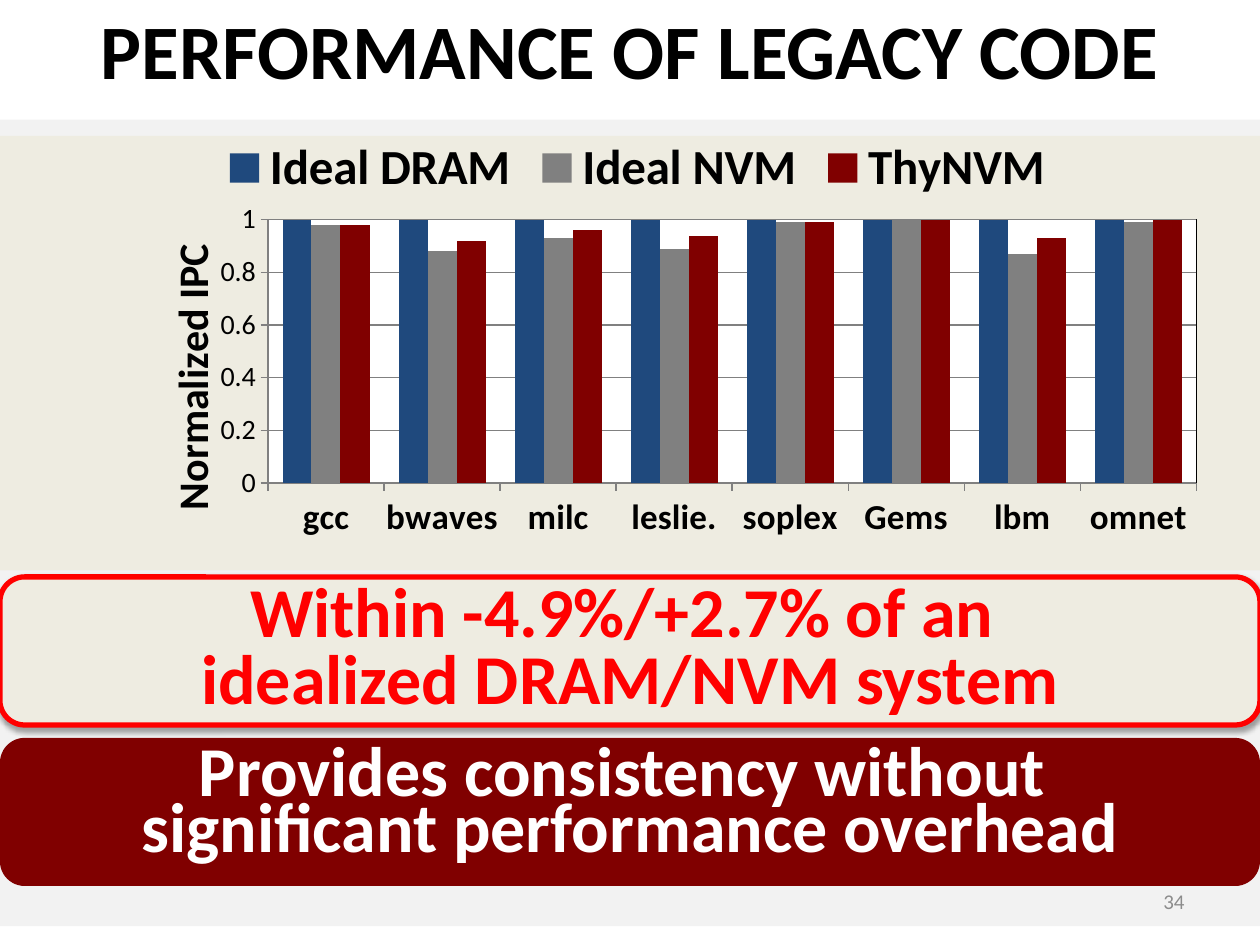
from collections import namedtuple
from dataclasses import dataclass

from lxml import etree
from pptx import Presentation
from pptx.chart.data import CategoryChartData
from pptx.dml.color import RGBColor
from pptx.enum.chart import XL_CHART_TYPE, XL_LEGEND_POSITION, XL_TICK_MARK
from pptx.enum.shapes import MSO_SHAPE
from pptx.enum.text import MSO_ANCHOR, PP_ALIGN
from pptx.oxml import parse_xml
from pptx.oxml.ns import nsdecls, qn
from pptx.util import Cm, Pt

COLUMNS = XL_CHART_TYPE.COLUMN_CLUSTERED
LEGEND_TOP = XL_LEGEND_POSITION.TOP
TICK_OUT, TICK_NONE = XL_TICK_MARK.OUTSIDE, XL_TICK_MARK.NONE
RECT, ROUNDED = MSO_SHAPE.RECTANGLE, MSO_SHAPE.ROUNDED_RECTANGLE
MIDDLE = MSO_ANCHOR.MIDDLE
CENTER, RIGHT = PP_ALIGN.CENTER, PP_ALIGN.RIGHT

Box = namedtuple("Box", "left top width height")  # centimetres


@dataclass(frozen=True)
class Theme:
    font: str = "Calibri"
    black: str = "000000"
    white: str = "FFFFFF"
    backdrop: str = "F2F2F2"
    cream: str = "EEECE1"
    blue: str = "1F497D"
    gray: str = "808080"
    maroon: str = "800000"
    red: str = "FF0000"
    number_gray: str = "8C8C8C"
    title: int = 44
    message: int = 40
    legend: int = 28
    axis_title: int = 24
    categories: int = 20
    values: int = 16
    number: int = 12


THEME = Theme()
SLIDE = Box(0, 0, 25.4, 19.05)
BENCHMARKS = ["gcc", "bwaves", "milc", "leslie.", "soplex", "Gems", "lbm", "omnet"]
SYSTEMS = [
    ("Ideal DRAM", THEME.blue, [1] * len(BENCHMARKS)),
    ("Ideal NVM", THEME.gray, [0.98, 0.88, 0.93, 0.89, 0.99, 1, 0.87, 0.99]),
    ("ThyNVM", THEME.maroon, [0.98, 0.92, 0.96, 0.94, 0.99, 1, 0.93, 1]),
]


def rgb(color):
    return RGBColor.from_string(color)


def lengths(box):
    return [Cm(value) for value in box]


def set_font(font, size, color=THEME.black, bold=False):
    font.name, font.size, font.bold = THEME.font, Pt(size), bold
    font.color.rgb = rgb(color)


def write(frame, lines, *, size, color=THEME.black, bold=True, align=CENTER,
          spacing=1.0, before=0):
    frame.word_wrap = True
    frame.vertical_anchor = MIDDLE
    for index, line in enumerate(lines):
        paragraph = frame.add_paragraph() if index else frame.paragraphs[0]
        paragraph.alignment = align
        paragraph.line_spacing = spacing
        paragraph.space_before = Pt(before)
        run = paragraph.add_run()
        run.text = line
        set_font(run.font, size, color, bold)


def add_panel(slide, box, fill, kind=RECT, outline=None):
    panel = slide.shapes.add_shape(kind, *lengths(box))
    panel.shadow.inherit = False
    panel.fill.solid()
    panel.fill.fore_color.rgb = rgb(fill)
    if outline:
        panel.line.color.rgb = rgb(outline)
        panel.line.width = Pt(3)
    else:
        panel.line.fill.background()
    return panel


def add_label(slide, box, text, **style):
    label = slide.shapes.add_textbox(*lengths(box))
    write(label.text_frame, [text], **style)


def add_soft_shadow(panel):
    effects = panel._element.spPr.find(qn("a:effectLst"))
    effects.append(parse_xml(
        f'<a:outerShdw {nsdecls("a")} blurRad="{Pt(3.1)}" dist="{Pt(1.8)}" '
        'dir="5400000" rotWithShape="0"><a:srgbClr val="000000">'
        '<a:alpha val="35000"/></a:srgbClr></a:outerShdw>'))


def manual_layout(**values):
    layout = parse_xml(f'<c:layout {nsdecls("c")}><c:manualLayout/></c:layout>')
    for tag, value in values.items():
        etree.SubElement(layout[0], qn(f"c:{tag}")).set("val", str(value))
    return layout


def replace_layout(parent, layout, index):
    for old in parent.findall(qn("c:layout")):
        parent.remove(old)
    parent.insert(index, layout)


def style_axes(chart):
    benchmarks, ipc = chart.category_axis, chart.value_axis
    for axis, size, bold in ((benchmarks, THEME.categories, True),
                             (ipc, THEME.values, False)):
        set_font(axis.tick_labels.font, size, bold=bold)
        axis.major_tick_mark, axis.minor_tick_mark = TICK_OUT, TICK_NONE
        axis.format.line.color.rgb = rgb(THEME.gray)
    ipc.minimum_scale, ipc.maximum_scale, ipc.major_unit = 0, 1, 0.2
    ipc.has_major_gridlines = True
    ipc.major_gridlines.format.line.color.rgb = rgb(THEME.gray)
    ipc.tick_labels.number_format = "General"
    ipc.tick_labels.number_format_is_linked = False
    title = ipc.axis_title
    title.text_frame.text = "Normalized IPC"
    set_font(title.text_frame.paragraphs[0].runs[0].font, THEME.axis_title, bold=True)
    replace_layout(title._element, manual_layout(
        xMode="edge", yMode="edge", x=0.07, y=0.25), 1)


def add_ipc_chart(slide, box):
    data = CategoryChartData()
    data.categories = BENCHMARKS
    for name, _, values in SYSTEMS:
        data.add_series(name, values)
    chart = slide.shapes.add_chart(COLUMNS, *lengths(box), data).chart
    set_font(chart.font, 18)
    chart.has_title = False
    chart.has_legend = True
    chart.legend.position = LEGEND_TOP
    chart.legend.include_in_layout = False
    set_font(chart.legend.font, THEME.legend, bold=True)

    bars = chart.plots[0]
    bars.gap_width, bars.overlap, bars.vary_by_categories = 100, 0, False
    for series, (_, color, _) in zip(bars.series, SYSTEMS):
        series.format.fill.solid()
        series.format.fill.fore_color.rgb = rgb(color)
    style_axes(chart)

    # White plot area at a fixed place
    plot_area = chart._chartSpace.chart.plotArea
    replace_layout(plot_area, manual_layout(
        layoutTarget="inner", xMode="edge", yMode="edge",
        x=0.17, y=0.215, w=0.83, h=0.565), 0)
    plot_area.append(parse_xml(
        f'<c:spPr {nsdecls("c", "a")}><a:solidFill><a:srgbClr val="{THEME.white}"/>'
        f'</a:solidFill><a:ln><a:solidFill><a:srgbClr val="{THEME.black}"/>'
        '</a:solidFill></a:ln></c:spPr>'))


def add_messages(slide, box):
    gap = 0.26
    height = (box.height - gap) / 2
    finding = box._replace(height=height)
    conclusion = finding._replace(top=box.top + height + gap)
    lower = add_panel(slide, conclusion, THEME.maroon, ROUNDED)
    write(lower.text_frame,
          ["Provides consistency without ", "significant performance overhead"],
          size=THEME.message, color=THEME.white, spacing=0.5, before=8)
    upper = add_panel(slide, finding, THEME.cream, ROUNDED, THEME.red)
    add_soft_shadow(upper)
    write(upper.text_frame,
          ["Within -4.9%/+2.7% of an ", "idealized DRAM/NVM system"],
          size=THEME.message, color=THEME.red, spacing=0.8)


def main():
    deck = Presentation()
    deck.slide_width, deck.slide_height = Cm(SLIDE.width), Cm(SLIDE.height)
    slide = deck.slides.add_slide(deck.slide_layouts[6])

    # Background bands
    add_panel(slide, Box(0, 2.41, SLIDE.width, 16.26), THEME.backdrop)
    add_panel(slide, Box(0, 2.74, SLIDE.width, 8.76), THEME.cream)

    # Title and slide number
    add_label(slide, Box(0, -0.43, SLIDE.width, 3.18), "PERFORMANCE OF LEGACY CODE",
              size=THEME.title, spacing=0.8)
    add_label(slide, Box(18.21, 17.65, 5.92, 1.02), "34", size=THEME.number,
              color=THEME.number_gray, bold=False, align=RIGHT)

    # Results and takeaways
    add_ipc_chart(slide, Box(1.57, 2.41, 22.56, 9.4))
    add_messages(slide, Box(0, 11.63, SLIDE.width, 6.23))
    deck.save("out.pptx")


if __name__ == "__main__":
    main()
